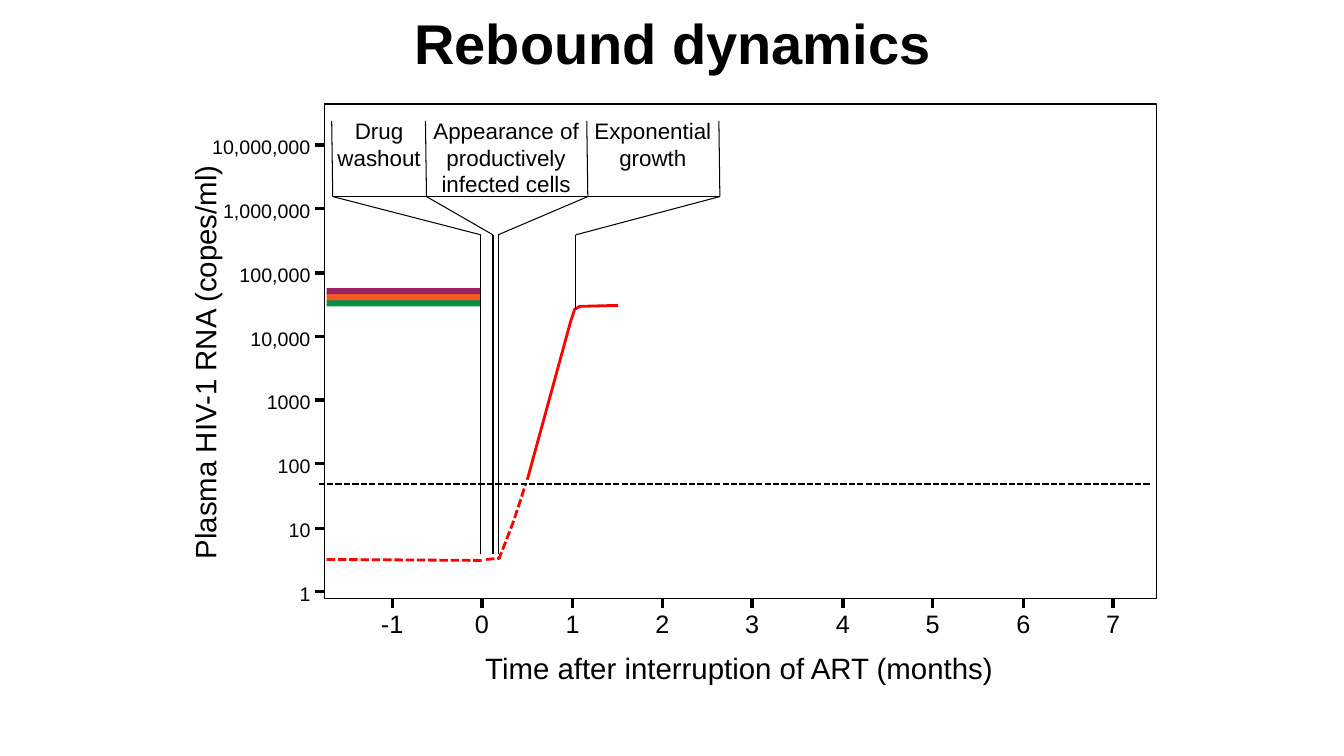
from dataclasses import dataclass

from lxml import etree
from pptx import Presentation
from pptx.dml.color import RGBColor
from pptx.enum.dml import MSO_LINE
from pptx.enum.shapes import MSO_CONNECTOR, MSO_SHAPE
from pptx.enum.text import MSO_ANCHOR, PP_ALIGN
from pptx.oxml.ns import qn
from pptx.util import Pt

STRAIGHT = MSO_CONNECTOR.STRAIGHT
RECT = MSO_SHAPE.RECTANGLE
DASH = MSO_LINE.SQUARE_DOT
TOP, MIDDLE = MSO_ANCHOR.TOP, MSO_ANCHOR.MIDDLE
CENTER, RIGHT = PP_ALIGN.CENTER, PP_ALIGN.RIGHT

PX = 9144  # EMU per px, 100 px to the inch
FONT = "Arial"
BLACK, RED = "000000", "FF0000"


@dataclass
class Phase:
    lines: list[str]
    left: int
    width: int


@dataclass
class Divider:
    x: int
    drop_x: int
    drop_bottom: int


@dataclass
class Bar:
    top: int
    height: int
    color: str


@dataclass
class Curve:
    points: list[tuple[int, int]]
    dashed: bool


# Plot geometry
FRAME_LEFT, FRAME_TOP, FRAME_WIDTH, FRAME_HEIGHT = 322, 103, 825, 491
FRAME_BOTTOM = FRAME_TOP + FRAME_HEIGHT
TICK = 9
Y_FIRST, Y_LAST = 144, 587
X_FIRST, X_LAST = 389, 1104
PLOT_LEFT = 324
CALLOUT_TOP, CALLOUT_BOTTOM, FAN_BOTTOM = 120, 195, 233

Y_LABELS = ["10,000,000", "1,000,000", "100,000", "10,000", "1000", "100", "10", "1"]
X_LABELS = ["-1", "0", "1", "2", "3", "4", "5", "6", "7"]
BARS = [Bar(290, 9, "F15B26"), Bar(286, 6, "9D1F60"), Bar(298, 6, "009247")]
CURVES = [
    Curve([(PLOT_LEFT, 555), (479, 556)], True),
    Curve([(482, 555), (495, 554), (501, 539), (509, 518), (516, 497), (521, 481)], True),
    Curve([(523, 476), (566, 319), (570, 307), (575, 304), (613, 303)], False),
]
DIVIDERS = [
    Divider(330, 477, 550),
    Divider(423, 489, 550),
    Divider(583, 494, 550),
    Divider(714, 571, 307),
]
PHASES = [
    Phase(["Drug", "washout"], 324, 104),
    Phase(["Appearance of", "productively infected cells"], 402, 200),
    Phase(["Exponential", "growth"], 579, 137),
]


def rgb(color: str) -> RGBColor:
    return RGBColor.from_string(color)


def spread(first: int, last: int, count: int) -> list[int]:
    return [round(first + i * (last - first) / (count - 1)) for i in range(count)]


def style_line(line, color: str, width: float, dashed: bool = False) -> None:
    line.color.rgb = rgb(color)
    line.width = Pt(width)
    if dashed:
        line.dash_style = DASH


def add_line(slide, x1: int, y1: int, x2: int, y2: int,
             width: float = 0.75, dashed: bool = False) -> None:
    s = slide.shapes.add_connector(STRAIGHT, x1 * PX, y1 * PX, x2 * PX, y2 * PX)
    style_line(s.line, BLACK, width, dashed)
    etree.SubElement(s._element.spPr, qn("a:effectLst"))


def add_rect(slide, x: int, y: int, w: int, h: int):
    s = slide.shapes.add_shape(RECT, x * PX, y * PX, w * PX, h * PX)
    s.shadow.inherit = False
    return s


def add_curve(slide, curve: Curve) -> None:
    builder = slide.shapes.build_freeform(*curve.points[0], scale=PX)
    builder.add_line_segments(curve.points[1:], close=False)
    s = builder.convert_to_shape()
    s.shadow.inherit = False
    s.fill.background()
    style_line(s.line, RED, 2, curve.dashed)


def fill_text(s, lines: list[str], size: int, align=CENTER, bold: bool = False) -> None:
    tf = s.text_frame
    tf.word_wrap = True
    tf.text = "\n".join(lines)
    for p in tf.paragraphs:
        p.alignment = align
        p.font.name, p.font.size, p.font.bold = FONT, Pt(size), bold
        p.font.color.rgb = rgb(BLACK)


def add_text(slide, x: int, y: int, w: int, h: int, lines: list[str], size: int,
             align=CENTER, inset: bool = False):
    s = slide.shapes.add_textbox(x * PX, y * PX, w * PX, h * PX)
    fill_text(s, lines, size, align)
    tf = s.text_frame
    tf.vertical_anchor = TOP
    if not inset:
        tf.margin_left = tf.margin_right = tf.margin_top = tf.margin_bottom = 0
    return s


def add_title(slide) -> None:
    s = slide.shapes.title
    s.left, s.top, s.width, s.height = 386 * PX, 3 * PX, 562 * PX, 77 * PX
    fill_text(s, ["Rebound dynamics"], 40, bold=True)
    s.text_frame.vertical_anchor = MIDDLE


def add_axes(slide) -> None:
    frame = add_rect(slide, FRAME_LEFT, FRAME_TOP, FRAME_WIDTH, FRAME_HEIGHT)
    frame.fill.background()
    style_line(frame.line, BLACK, 1.13)

    for label, y in zip(Y_LABELS, spread(Y_FIRST, Y_LAST, len(Y_LABELS))):
        add_line(slide, 321 - TICK, y, 321, y, 2.38)
        add_text(slide, 198, y - 10, 110, 24, [label], 14, RIGHT)
    for label, x in zip(X_LABELS, spread(X_FIRST, X_LAST, len(X_LABELS))):
        add_line(slide, x, FRAME_BOTTOM + TICK, x, FRAME_BOTTOM, 2.38)
        add_text(slide, x - 25, 599, 50, 40, [label], 18, inset=True)

    add_text(slide, 469, 645, 528, 35, ["Time after interruption of ART (months)"], 21)
    y_title = add_text(slide, -7, 342, 420, 35, ["Plasma HIV-1 RNA (copes/ml)"], 21)
    y_title.rotation = 270


def add_callouts(slide) -> None:
    for d in DIVIDERS:
        add_line(slide, d.x, CALLOUT_BOTTOM, d.x - 1, CALLOUT_TOP)
        add_line(slide, d.x, CALLOUT_BOTTOM, d.drop_x, FAN_BOTTOM)
        add_line(slide, d.drop_x, FAN_BOTTOM, d.drop_x, d.drop_bottom)
    add_line(slide, DIVIDERS[0].x, CALLOUT_BOTTOM, DIVIDERS[-1].x, CALLOUT_BOTTOM)
    for phase in PHASES:
        add_text(slide, phase.left, 111, phase.width, 91, phase.lines, 16, inset=True)


def main() -> None:
    prs = Presentation()
    prs.slide_width, prs.slide_height = 1333 * PX, 750 * PX
    slide = prs.slides.add_slide(prs.slide_layouts[5])
    add_title(slide)

    # Treatment bars and viral load
    for bar in BARS:
        s = add_rect(slide, PLOT_LEFT, bar.top, 476 - PLOT_LEFT, bar.height)
        s.fill.solid()
        s.fill.fore_color.rgb = rgb(bar.color)
        s.line.fill.background()
    for curve in CURVES:
        add_curve(slide, curve)

    # Axes, detection limit and phases
    add_axes(slide)
    add_line(slide, 316, 480, 1142, 480, 1.5, dashed=True)
    add_callouts(slide)
    prs.save("out.pptx")


if __name__ == "__main__":
    main()
